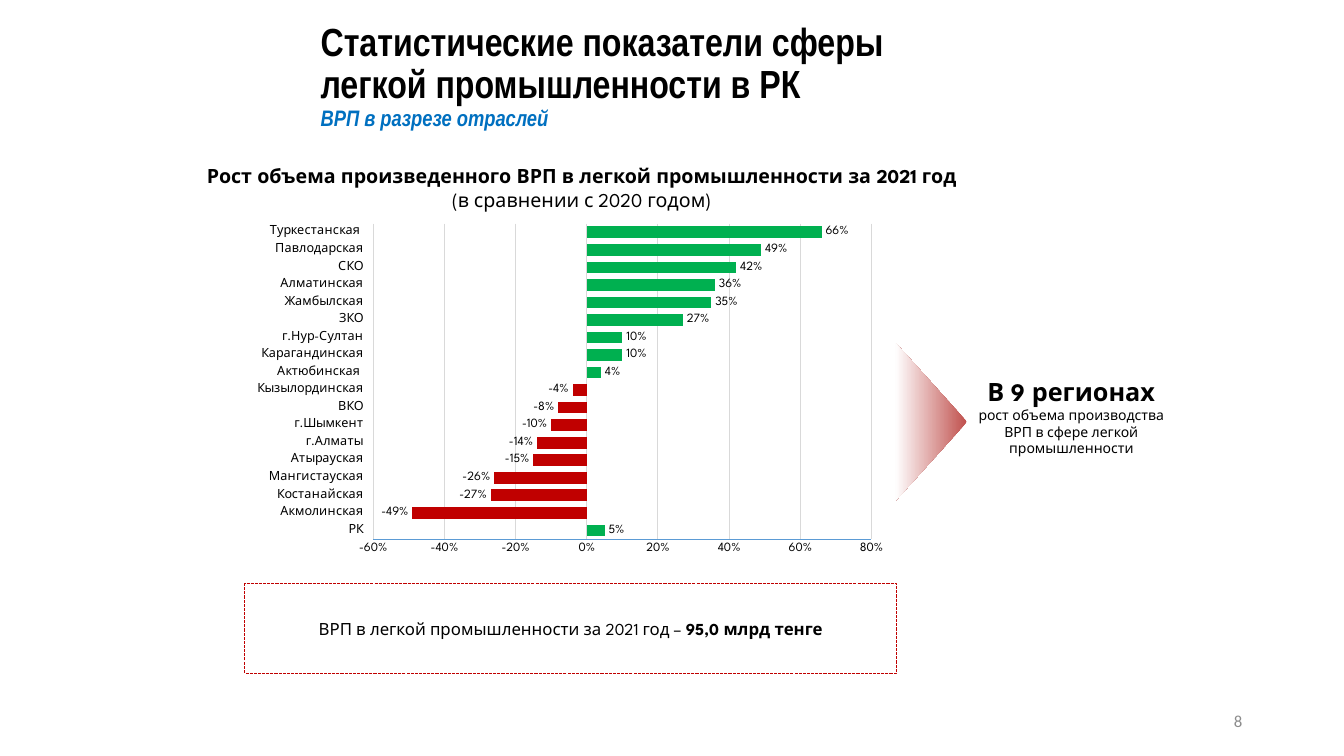
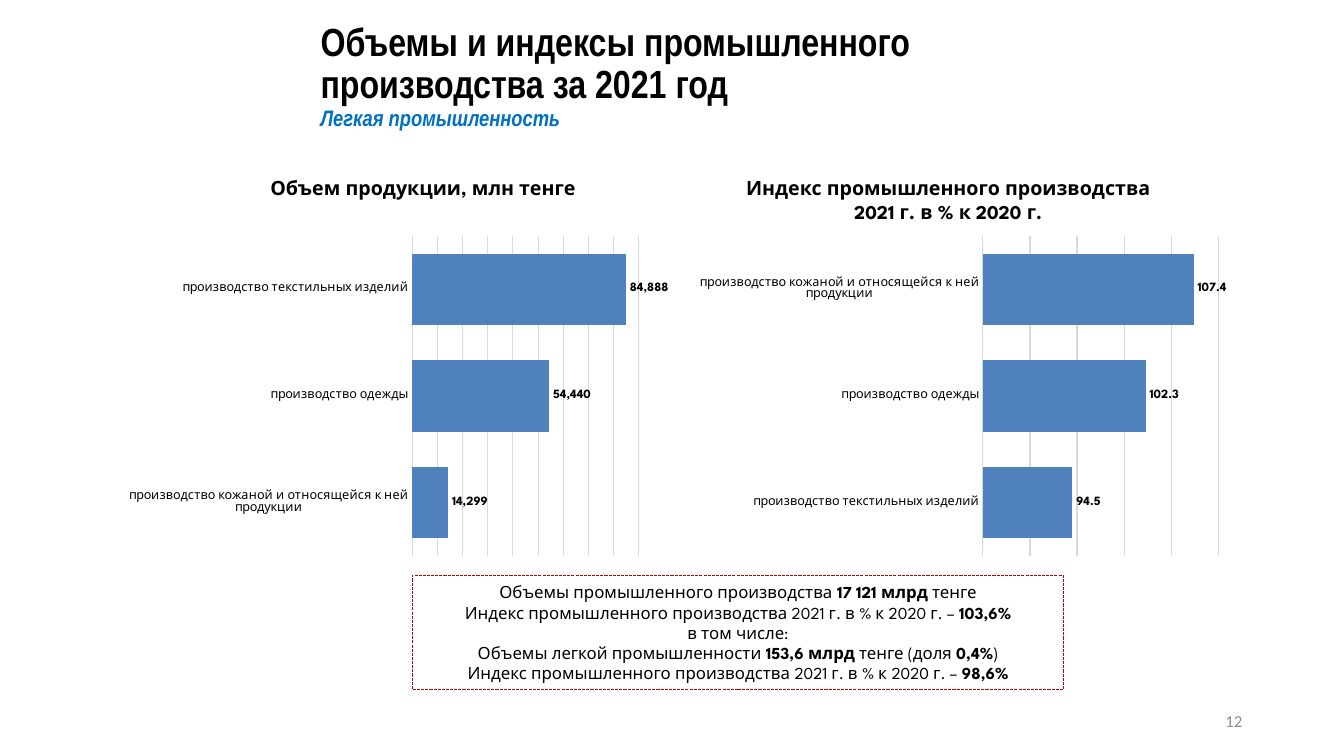
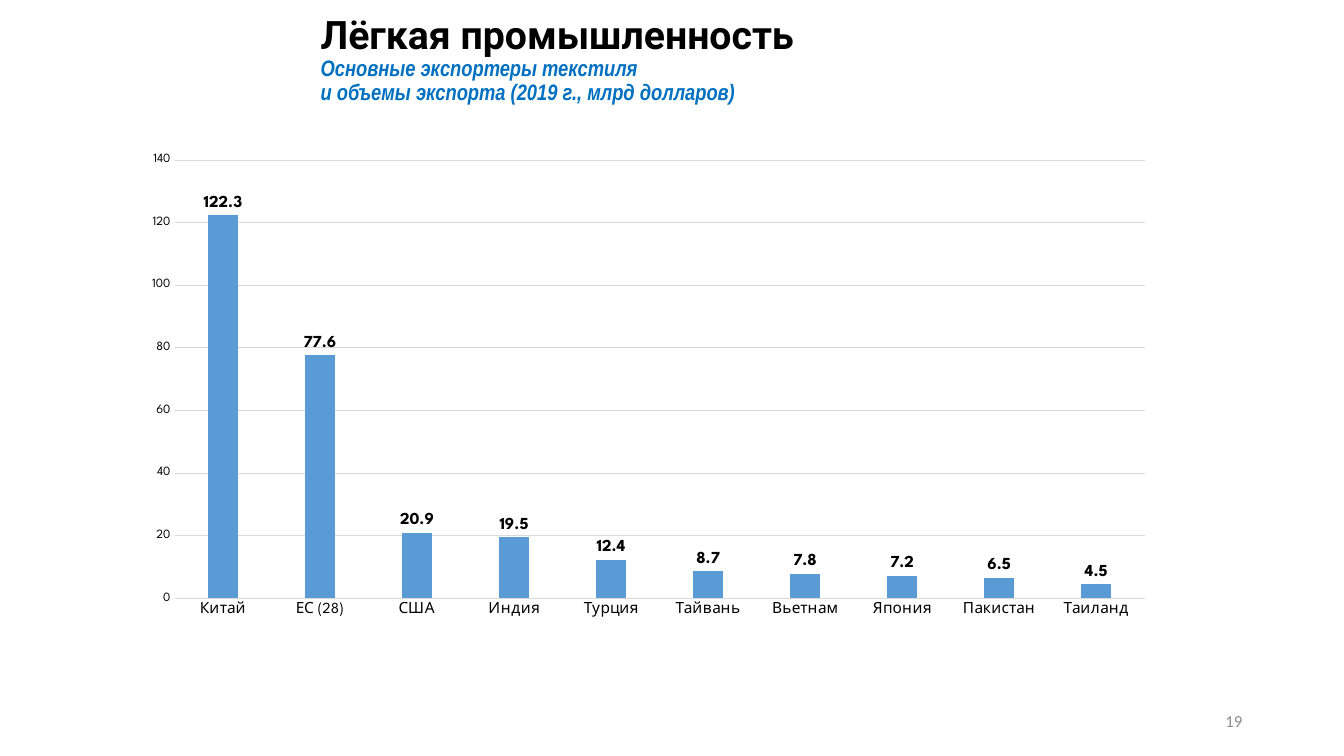
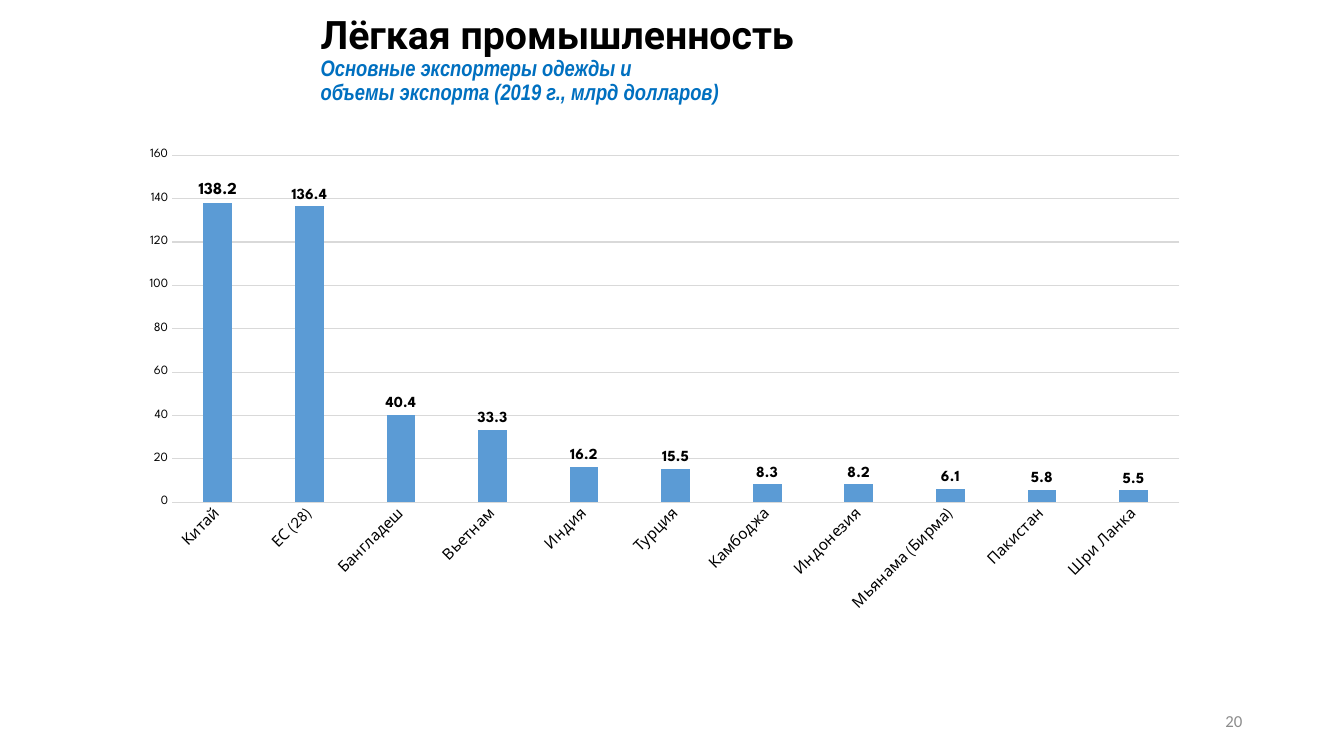
import copy

import pptx
import pptx.chart.data
import pptx.dml.color
import pptx.enum.chart
import pptx.enum.dml
import pptx.enum.shapes
import pptx.enum.text
import pptx.oxml
import pptx.util

Inches, Pt = pptx.util.Inches, pptx.util.Pt
Kind = pptx.enum.chart.XL_CHART_TYPE
Align = pptx.enum.text.PP_ALIGN
Anchor = pptx.enum.text.MSO_ANCHOR
Shape = pptx.enum.shapes.MSO_SHAPE

COLORS = {
    "text": "000000", "accent": "0070C0", "page": "8C8C8C", "grid": "D9D9D9",
    "up": "00B050", "down": "C00000", "bar": "4F81BD", "column": "5B9BD5",
    "arrow": "C0504D", "white": "FFFFFF",
}
HEAD, BODY, LEAD, PLAIN = "Arial Narrow", "League Spartan", "Roboto", "Calibri"

# In text lists, each item is a paragraph and *stars* mark bold words.
LEATHER = "производство кожаной и относящейся к ней продукции"
CLOTHES = "производство одежды"
TEXTILE = "производство текстильных изделий"

REGIONS = [
    ("РК", 0.05), ("Акмолинская", -0.49), ("Костанайская", -0.27),
    ("Мангистауская", -0.26), ("Атырауская", -0.15), ("г.Алматы", -0.14),
    ("г.Шымкент", -0.1), ("ВКО", -0.08), ("Кызылординская", -0.04),
    ("Актюбинская ", 0.04), ("Карагандинская", 0.1), ("г.Нур-Султан", 0.1),
    ("ЗКО", 0.27), ("Жамбылская", 0.35), ("Алматинская", 0.36), ("СКО", 0.42),
    ("Павлодарская", 0.49), ("Туркестанская ", 0.66),
]
VOLUMES = [(LEATHER, 14299), (CLOTHES, 54440), (TEXTILE, 84888)]
INDEXES = [(TEXTILE, 94.5), (CLOTHES, 102.3), (LEATHER, 107.4)]
CLOTH = [
    ("Китай", 122.3), ("ЕС (28)", 77.6), ("США", 20.9), ("Индия", 19.5),
    ("Турция", 12.4), ("Тайвань", 8.7), ("Вьетнам", 7.8), ("Япония", 7.2),
    ("Пакистан", 6.5), ("Таиланд", 4.5),
]
WEAR = [
    ("Китай", 138.2), ("ЕС (28)", 136.4), ("Бангладеш", 40.4),
    ("Вьетнам", 33.3), ("Индия", 16.2), ("Турция", 15.5), ("Камбоджа", 8.3),
    ("Индонезия", 8.2), ("Мьянама (Бирма)", 6.1), ("Пакистан", 5.8),
    ("Шри Ланка", 5.5),
]
GROWTH = [
    "*Рост объема произведенного ВРП в легкой промышленности за 2021 год*",
    "(в сравнении с 2020 годом)",
]
TOTAL = ["ВРП в легкой промышленности за 2021 год – *95,0 млрд тенге*"]
SUMMARY = [
    "Объемы промышленного производства *17 121 млрд* тенге",
    "Индекс промышленного производства 2021 г. в % к 2020 г. – *103,6%*",
    "в том числе:",
    "Объемы легкой промышленности *153,6 млрд* тенге (доля *0,4%*)",
    "Индекс промышленного производства 2021 г. в % к 2020 г. – *98,6%*",
]


def rgb(name):
    return pptx.dml.color.RGBColor.from_string(COLORS[name])


def box(rect):
    return [Inches(v) for v in rect]


def style(font, size, color="text", face=BODY, bold=False):
    font.size, font.name, font.bold = Pt(size), face, bold
    font.color.rgb = rgb(color)


def write(shape, lines, sizes, align=Align.CENTER, anchor=Anchor.MIDDLE,
          **look):
    """Fill a shape; the last size also serves any further lines."""
    frame = shape.text_frame
    frame.word_wrap, frame.vertical_anchor = True, anchor
    for i, line in enumerate(lines):
        par = frame.paragraphs[0] if i == 0 else frame.add_paragraph()
        par.alignment = align
        for j, part in enumerate(line.split("*")):
            if part:
                run = par.add_run()
                run.text = part
                style(run.font, sizes[min(i, len(sizes) - 1)],
                      bold=j % 2 == 1, **look)


def add_text(slide, rect, lines, sizes, **look):
    write(slide.shapes.add_textbox(*box(rect)), lines, sizes, **look)


def add_slide(deck, page, head, sub, face=HEAD, height=0.99):
    slide = deck.slides.add_slide(deck.slide_layouts[5])
    title = slide.shapes.title
    title.left, title.top, title.width, title.height = box(
        (3.08, 0.27, 8.48, height))
    frame = title.text_frame
    frame.word_wrap, frame.vertical_anchor = True, Anchor.MIDDLE
    frame.auto_size = pptx.enum.text.MSO_AUTO_SIZE.NONE
    par = frame.paragraphs[0]
    par.text = "\v".join(head + sub)
    par.alignment, par.line_spacing = Align.LEFT, 0.9
    for i, run in enumerate(par.runs):
        if i < len(head):
            style(run.font, 28, face=face, bold=True)
        else:
            style(run.font, 16, "accent", HEAD, True)
            run.font.italic = True
        gap = run._r.getnext()
        if gap is not None:
            gap.append(copy.deepcopy(run._r.rPr))
    add_text(slide, (9.42, 6.95, 3, 0.4), [str(page)], [12],
             align=Align.RIGHT, color="page", face=PLAIN)
    return slide


def add_frame(slide, rect, lines):
    """Dashed red box with a summary."""
    shape = slide.shapes.add_shape(Shape.RECTANGLE, *box(rect))
    shape.shadow.inherit = False
    shape.fill.background()
    shape.line.color.rgb, shape.line.width = rgb("down"), Pt(0.75)
    shape.line.dash_style = pptx.enum.dml.MSO_LINE.SQUARE_DOT
    write(shape, lines, [12])


def add_arrow(slide, rect):
    shape = slide.shapes.add_shape(Shape.ISOSCELES_TRIANGLE, *box(rect))
    shape.rotation = 90
    shape.shadow.inherit = False
    shape.line.fill.background()
    shape.fill.gradient()
    shape.fill.gradient_angle = 270
    for stop, name in zip(shape.fill.gradient_stops, ("arrow", "white")):
        stop.color.rgb = rgb(name)


def rule(line, name):
    line.color.rgb, line.width = rgb(name), Pt(0.75)


def set_plot(chart, rect, plot):
    """Pin the inner plot area, given in slide inches."""
    left, top, wide, high = rect
    parts = {"x": (plot[0] - left) / wide, "y": (plot[1] - top) / high,
             "w": plot[2] / wide, "h": plot[3] / high}
    area = chart._chartSpace.chart.plotArea
    for old in area.findall(pptx.oxml.ns.qn("c:layout")):
        area.remove(old)
    tags = "".join(f'<c:{k}Mode val="edge"/>' for k in "xy")
    tags += "".join(f'<c:{k} val="{v:.3f}"/>' for k, v in parts.items())
    area.insert(0, pptx.oxml.parse_xml(
        f'<c:layout {pptx.oxml.ns.nsdecls("c")}><c:manualLayout>'
        f'<c:layoutTarget val="inner"/>{tags}</c:manualLayout></c:layout>'))


def add_chart(slide, rect, plot, rows, scale, kind=Kind.BAR_CLUSTERED,
              color="bar", gap=50, lap=None, fmt="General", cat=9, label=9,
              bold=True, axis=None, shown=True):
    data = pptx.chart.data.CategoryChartData(number_format=fmt)
    data.categories = [name for name, _ in rows]
    data.add_series("Series 1", [value for _, value in rows])
    chart = slide.shapes.add_chart(kind, *box(rect), data).chart
    chart.has_legend = chart.has_title = False
    style(chart.font, 10, face=PLAIN)
    set_plot(chart, rect, plot)

    none = pptx.enum.chart.XL_TICK_MARK.NONE
    cats, vals = chart.category_axis, chart.value_axis
    for ax, size in ((cats, cat), (vals, 9)):
        ax.major_tick_mark = ax.minor_tick_mark = none
        style(ax.tick_labels.font, size)
    rule(cats.format.line, "grid")
    vals.minimum_scale, vals.maximum_scale, vals.major_unit = scale
    vals.has_major_gridlines, vals.visible = True, shown
    rule(vals.major_gridlines.format.line, "grid")
    vals.tick_labels.number_format = fmt
    vals.tick_labels.number_format_is_linked = False
    if axis:
        rule(vals.format.line, axis)
    else:
        vals.format.line.fill.background()

    bars = chart.plots[0]
    bars.vary_by_categories, bars.gap_width = False, gap
    if lap is not None:
        bars.overlap = lap
    series = bars.series[0]
    series.invert_if_negative = False
    series.format.fill.solid()
    series.format.fill.fore_color.rgb = rgb(color)
    tags = series.data_labels
    tags.show_value = True
    tags.number_format, tags.number_format_is_linked = fmt, False
    tags.position = pptx.enum.chart.XL_LABEL_POSITION.OUTSIDE_END
    style(tags.font, label, bold=bold)
    return chart


def add_exports(deck, page, sub, rect, plot, rows, top, label):
    slide = add_slide(deck, page, ["Лёгкая промышленность"], sub, LEAD, 0.66)
    return add_chart(slide, rect, plot, rows, (0, top, 20),
                     Kind.COLUMN_CLUSTERED, "column", 219, -27,
                     cat=11, label=label)


def add_growth(deck):
    slide = add_slide(
        deck, 8,
        ["Статистические показатели сферы ", "легкой промышленности в РК"],
        ["ВРП в разрезе отраслей"])
    add_text(slide, (0.29, 1.58, 10.96, 0.57), GROWTH, [14],
             anchor=Anchor.TOP)
    add_arrow(slide, (8.45, 3.83, 1.57, 0.71))
    add_text(slide, (9.6, 3.62, 2.05, 1.02),
             ["*В 9 регионах*",
              "рост объема производства ВРП в сфере легкой промышленности"],
             [18, 10])
    chart = add_chart(slide, (2.43, 2.15, 6.46, 3.43),
                      (3.7, 2.22, 4.94, 3.13), REGIONS, (-0.6, 0.8, 0.2),
                      color="up", fmt="0%", bold=False, axis="column")
    chart.category_axis.tick_label_position = (
        pptx.enum.chart.XL_TICK_LABEL_POSITION.LOW)
    for i, (_, value) in enumerate(REGIONS):
        if value < 0:
            fill = chart.plots[0].series[0].points[i].format.fill
            fill.solid()
            fill.fore_color.rgb = rgb("down")
    add_frame(slide, (2.43, 5.79, 6.46, 0.89), TOTAL)


def add_output(deck):
    slide = add_slide(
        deck, 12, ["Объемы и индексы промышленного ", "производства за 2021 год"],
        ["Легкая промышленность"])
    add_chart(slide, (1.27, 2.28, 5.36, 3.31), (4.09, 2.34, 2.25, 3.18),
              VOLUMES, (0, 90000, 10000), fmt="#,##0", shown=False)
    add_chart(slide, (6.84, 2.28, 5.36, 3.31), (9.75, 2.34, 2.33, 3.18),
              INDEXES, (85, 110, 5), shown=False)
    add_text(slide, (1.76, 1.7, 4.87, 0.34), ["*Объем продукции, млн тенге*"],
             [14], anchor=Anchor.TOP)
    add_text(slide, (6.97, 1.7, 4.87, 0.57),
             ["*Индекс промышленного производства*",
              "*2021 г. в % к 2020 г.*"], [14], anchor=Anchor.TOP)
    add_frame(slide, (4.09, 5.71, 6.46, 1.13), SUMMARY)


def main():
    deck = pptx.Presentation()
    deck.slide_width, deck.slide_height = Inches(13.33), Inches(7.5)
    add_growth(deck)
    add_output(deck)
    add_exports(deck, 19,
                ["Основные экспортеры текстиля ",
                 "и объемы экспорта (2019 г., млрд долларов)"],
                (1.3, 1.44, 10.26, 4.79), (1.73, 1.59, 9.62, 4.35),
                CLOTH, 140, 12)
    chart = add_exports(deck, 20,
                        ["Основные экспортеры одежды и ",
                         "объемы экспорта (2019 г., млрд долларов)"],
                        (1.27, 1.45, 10.64, 4.78), (1.71, 1.54, 9.99, 3.44),
                        WEAR, 160, 11)
    turn = chart.category_axis._element.txPr.find(pptx.oxml.ns.qn("a:bodyPr"))
    turn.set("rot", str(-45 * 60000))
    first = chart.plots[0].series[0].points[0].data_label
    style(first.font, 12, bold=True)
    first.position = pptx.enum.chart.XL_LABEL_POSITION.OUTSIDE_END
    deck.save("out.pptx")


if __name__ == "__main__":
    main()
